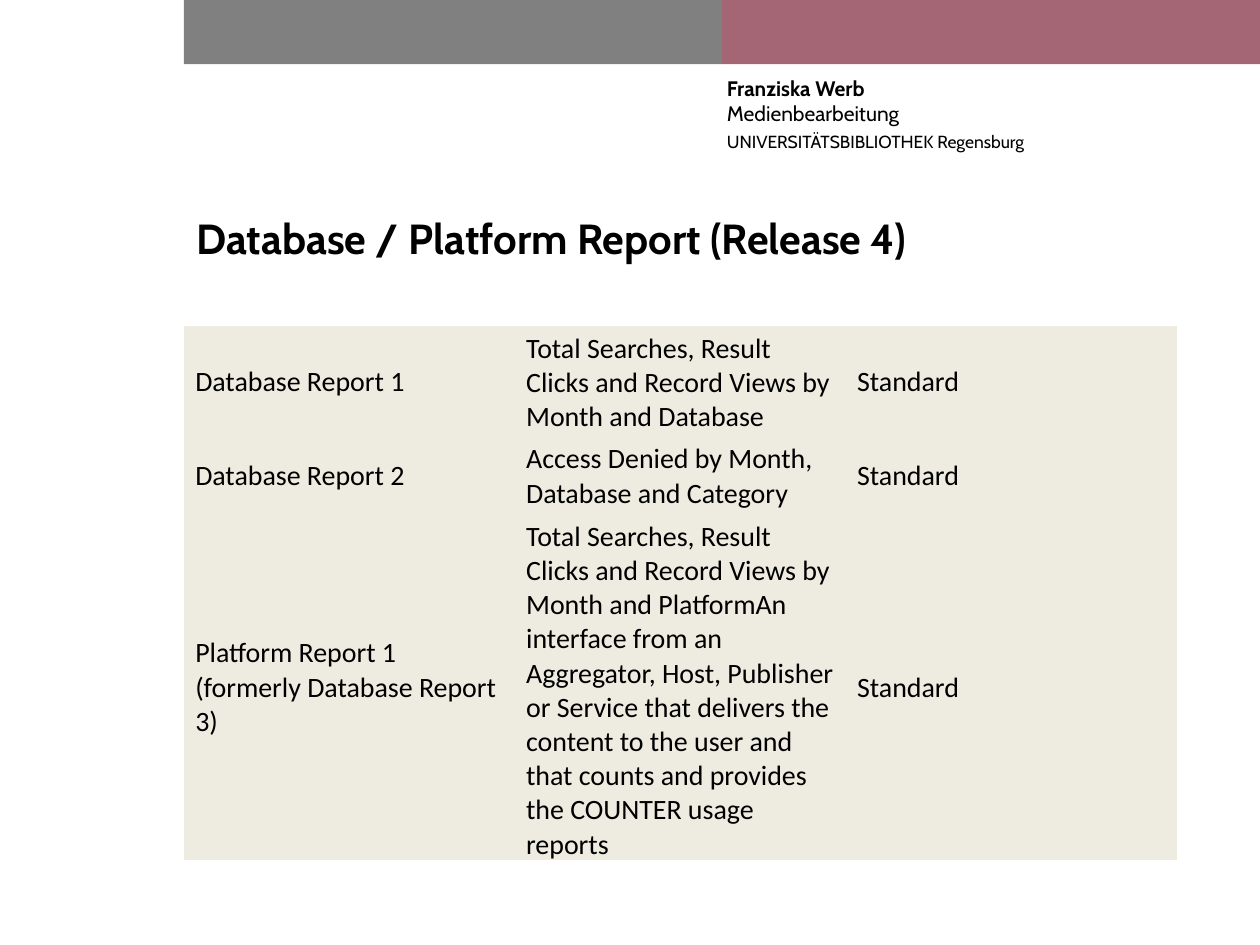
import pptx
import pptx.dml.color
import pptx.enum.shapes
import pptx.enum.text
import pptx.oxml.ns
import pptx.util

Inches = pptx.util.Inches
Pt = pptx.util.Pt
Anchor = pptx.enum.text.MSO_ANCHOR

COLORS = {"grey": "808080", "rose": "A46674", "sand": "EEECE1", "text": "000000"}
NO_STYLE_NO_GRID = "{2D5ABB26-0587-4C30-8999-92F81FD0307C}"


def color(name):
    return pptx.dml.color.RGBColor.from_string(COLORS[name])


def style(font, **values):
    for name, value in values.items():
        setattr(font, name, value)
    font.color.rgb = color("text")


deck = pptx.Presentation()
deck.slide_width = Inches(10)
deck.slide_height = Inches(7.5)
page = deck.slides.add_slide(deck.slide_layouts[5])

for left, fill in ((1.46, "grey"), (5.73, "rose")):
    band = page.shapes.add_shape(
        pptx.enum.shapes.MSO_SHAPE.RECTANGLE,
        Inches(left), Inches(0), Inches(4.27), Inches(0.51),
    )
    band.shadow.inherit = False
    band.fill.solid()
    band.fill.fore_color.rgb = color(fill)
    band.line.fill.background()

sender = page.shapes.add_textbox(Inches(5.77), Inches(0.6), Inches(4.04), Inches(0.94))
frame = sender.text_frame
frame_format = {"word_wrap": True, "margin_left": 0, "margin_right": 0,
                "margin_top": 0, "margin_bottom": 0}
for name, value in frame_format.items():
    setattr(frame, name, value)
person = frame.paragraphs[0]
library = frame.add_paragraph()
for para, text, size, bold in (
    (person, "Franziska Werb", 12, True),
    (person, "Medienbearbeitung", 12, False),
    (library, "UNIVERSITÄTSBIBLIOTHEK Regensburg", 10, False),
):
    if para.runs:
        para.add_line_break()
    span = para.add_run()
    span.text = text
    style(span.font, name="Cabin", size=Pt(size), bold=bold)
    para.space_after = Pt(3)

title = page.shapes.title
title_format = {"left": 1.46, "top": 1.64, "width": 7.86, "height": 0.76}
for name, value in title_format.items():
    setattr(title, name, Inches(value))
title.text_frame.text = "Database / Platform Report (Release 4)"
title.text_frame.vertical_anchor = Anchor.TOP
heading = title.text_frame.paragraphs[0]
heading.alignment = pptx.enum.text.PP_ALIGN.LEFT
style(heading.runs[0].font, name="Cabin", size=Pt(24), bold=True)

reports = [
    ("Database Report 1",
     "Total Searches, Result Clicks and Record Views by Month and Database",
     "Standard"),
    ("Database Report 2",
     "Access Denied by Month, Database and Category",
     "Standard"),
    ("Platform Report 1\v(formerly Database Report 3)",
     "Total Searches, Result Clicks and Record Views by Month and PlatformAn "
     "interface from an Aggregator, Host, Publisher or Service that delivers the "
     "content to the user and that counts and provides the COUNTER usage reports",
     "Standard"),
]
row_heights = [0.88, 0.61, 2.71]
table_frame = page.shapes.add_table(
    len(reports), 3, Inches(1.46), Inches(2.59), Inches(7.88), Inches(sum(row_heights))
)
table = table_frame.table
table.first_row = False
table.horz_banding = False
for style_id in table_frame.element.iter(pptx.oxml.ns.qn("a:tableStyleId")):
    style_id.text = NO_STYLE_NO_GRID

cell_format = {"vertical_anchor": Anchor.MIDDLE,
               "margin_left": Inches(0.09), "margin_right": Inches(0.09),
               "margin_top": Inches(0.04), "margin_bottom": Inches(0.04)}
for row, height, report in zip(table.rows, row_heights, reports):
    row.height = Inches(height)
    for cell, text in zip(row.cells, report):
        for name, value in cell_format.items():
            setattr(cell, name, value)
        cell.fill.solid()
        cell.fill.fore_color.rgb = color("sand")
        para = cell.text_frame.paragraphs[0]
        para.text = text
        for span in para.runs:
            style(span.font, name="Calibri", size=Pt(16))

deck.save("out.pptx")
